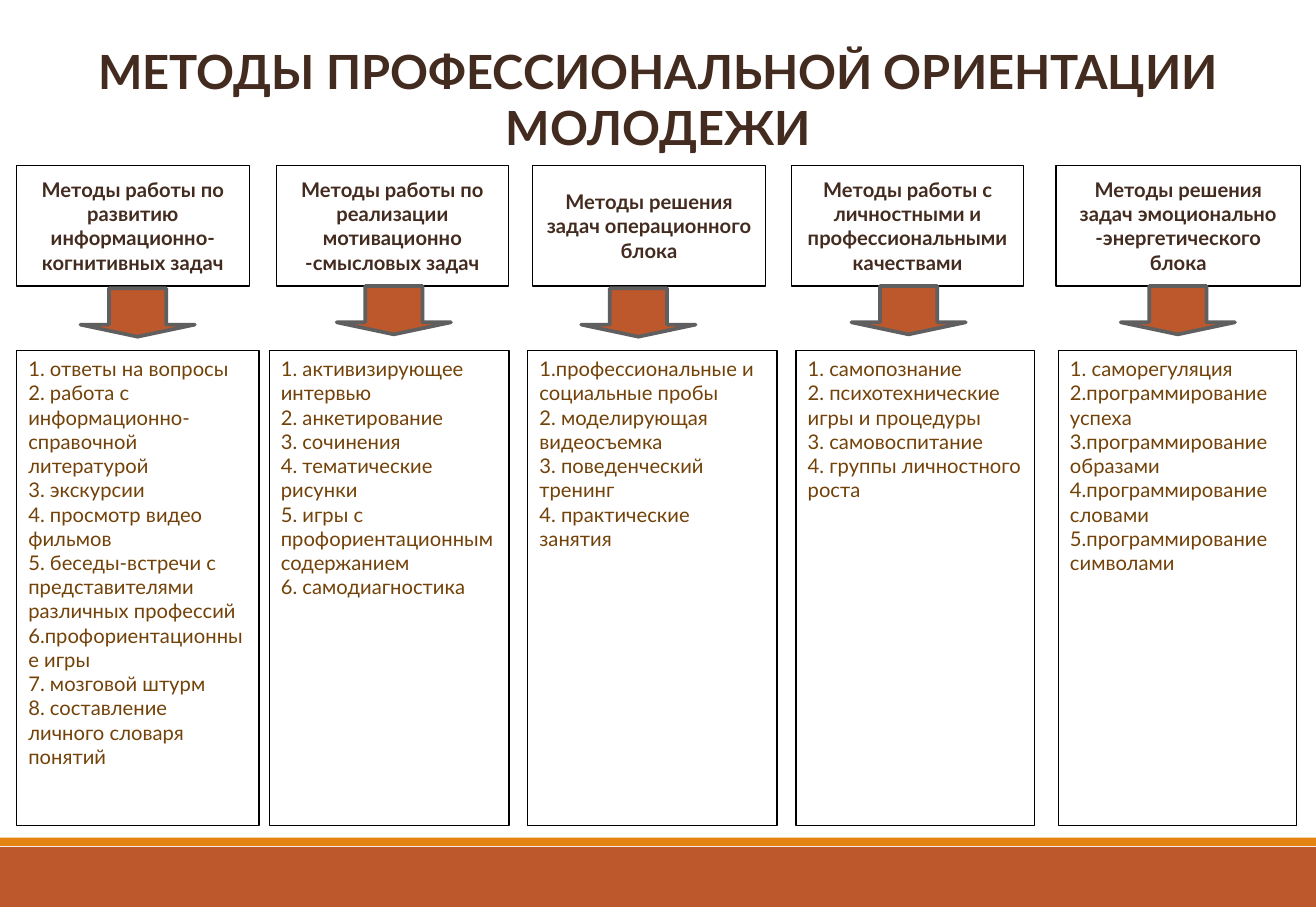
from pptx import Presentation
from pptx.dml.color import RGBColor
from pptx.enum import shapes, text
from pptx.util import Cm, Pt

TITLE = "МЕТОДЫ ПРОФЕССИОНАЛЬНОЙ ОРИЕНТАЦИИ МОЛОДЕЖИ"

# Heading, (left, width) of heading, (left, width) of list, (left, top) of arrow, methods
COLUMNS = [
    ("Методы работы по развитию информационно-когнитивных задач",
     (0.36, 5), (0.36, 5.21), (1.73, 6.2),
     ["1. ответы на вопросы",
      "2. работа с информационно-справочной литературой",
      "3. экскурсии",
      "4. просмотр видео фильмов",
      "5. беседы-встречи с представителями различных профессий",
      "6.профориентационные игры",
      "7. мозговой штурм",
      "8. составление личного словаря понятий"]),
    ("Методы работы по реализации мотивационно -смысловых задач",
     (5.94, 5), (5.79, 5.16), (7.24, 6.15),
     ["1. активизирующее интервью",
      "2. анкетирование",
      "3. сочинения",
      "4. тематические рисунки",
      "5. игры с профориентационным содержанием",
      "6. самодиагностика"]),
    ("Методы решения задач операционного блока",
     (11.46, 5), (11.35, 5.36), (12.5, 6.2),
     ["1.профессиональные и социальные пробы",
      "2. моделирующая видеосъемка",
      "3. поведенческий тренинг",
      "4. практические занятия"]),
    ("Методы работы с личностными и профессиональными качествами",
     (17.02, 5), (17.12, 5.13), (18.31, 6.15),
     ["1. самопознание",
      "2. психотехнические игры и процедуры",
      "3. самовоспитание",
      "4. группы личностного роста"]),
    ("Методы решения задач эмоционально -энергетического блока",
     (22.71, 5.26), (22.76, 5.13), (24.1, 6.15),
     ["1. саморегуляция",
      "2.программирование успеха",
      "3.программирование образами",
      "4.программирование словами",
      "5.программирование символами"]),
]

SLIDE_W, SLIDE_H = 28.3, 19.5
HEAD_TOP, HEAD_H = 3.56, 2.59
LIST_TOP, LIST_H = 7.54, 10.21
ARROW_W, ARROW_H = 2.46, 1.04
STRIPE_TOP, BAND_TOP = 18.01, 18.21

FONT = "Lato"
DARK = RGBColor(0x43, 0x2B, 0x20)
BROWN = RGBColor(0x72, 0x42, 0x09)
RUST = RGBColor(0xBD, 0x58, 0x2C)
ORANGE = RGBColor(0xE4, 0x83, 0x12)
GREY = RGBColor(0x5F, 0x5F, 0x5F)
BLACK = RGBColor(0, 0, 0)

RECT = shapes.MSO_SHAPE.RECTANGLE
ARROW = shapes.MSO_SHAPE.DOWN_ARROW
CENTER, LEFT = text.PP_ALIGN.CENTER, text.PP_ALIGN.LEFT
MIDDLE, TOP = text.MSO_ANCHOR.MIDDLE, text.MSO_ANCHOR.TOP


def write(sp, lines, size=12.3, color=DARK, bold=False, align=CENTER, anchor=MIDDLE):
    tf = sp.text_frame
    tf.word_wrap = True
    tf.auto_size = text.MSO_AUTO_SIZE.NONE
    tf.vertical_anchor = anchor
    for i, line in enumerate(lines):
        p = tf.add_paragraph() if i else tf.paragraphs[0]
        p.alignment = align
        p.line_spacing = 1.0
        p.space_before = Pt(0)
        r = p.add_run()
        r.text = line
        r.font.name, r.font.size, r.font.bold = FONT, Pt(size), bold
        r.font.color.rgb = color


def add_box(s, kind, left, top, width, height, fill=None, line=None, weight=0.75):
    sp = s.shapes.add_shape(kind, Cm(left), Cm(top), Cm(width), Cm(height))
    sp.shadow.inherit = False
    if fill is None:
        sp.fill.background()
    else:
        sp.fill.solid()
        sp.fill.fore_color.rgb = fill
    if line is None:
        sp.line.fill.background()
    else:
        sp.line.color.rgb = line
        sp.line.width = Pt(weight)
    return sp


def main():
    prs = Presentation()
    prs.slide_width, prs.slide_height = Cm(SLIDE_W), Cm(SLIDE_H)
    s = prs.slides.add_slide(prs.slide_layouts[5])

    # Bottom band and stripe
    add_box(s, RECT, 0, BAND_TOP, SLIDE_W, SLIDE_H - BAND_TOP, fill=RUST)
    add_box(s, RECT, 0, STRIPE_TOP, SLIDE_W, 0.18, fill=ORANGE)

    # Title
    title = s.shapes.title
    title.left, title.top, title.width, title.height = Cm(1.75), Cm(0.74), Cm(24.82), Cm(2.77)
    write(title, [TITLE], size=28.7, bold=True)

    # Columns: heading, list of methods, arrow between them
    for heading, (head_x, head_w), (list_x, list_w), (arrow_x, arrow_y), methods in COLUMNS:
        head = add_box(s, RECT, head_x, HEAD_TOP, head_w, HEAD_H, line=BLACK)
        write(head, [heading], bold=True)
        box = add_box(s, RECT, list_x, LIST_TOP, list_w, LIST_H, line=BLACK)
        write(box, methods, color=BROWN, align=LEFT, anchor=TOP)
        arrow = add_box(s, ARROW, arrow_x, arrow_y, ARROW_W, ARROW_H,
                        fill=RUST, line=GREY, weight=2.25)
        arrow.adjustments[0], arrow.adjustments[1] = 0.5, 0.25

    prs.save("out.pptx")


if __name__ == "__main__":
    main()
